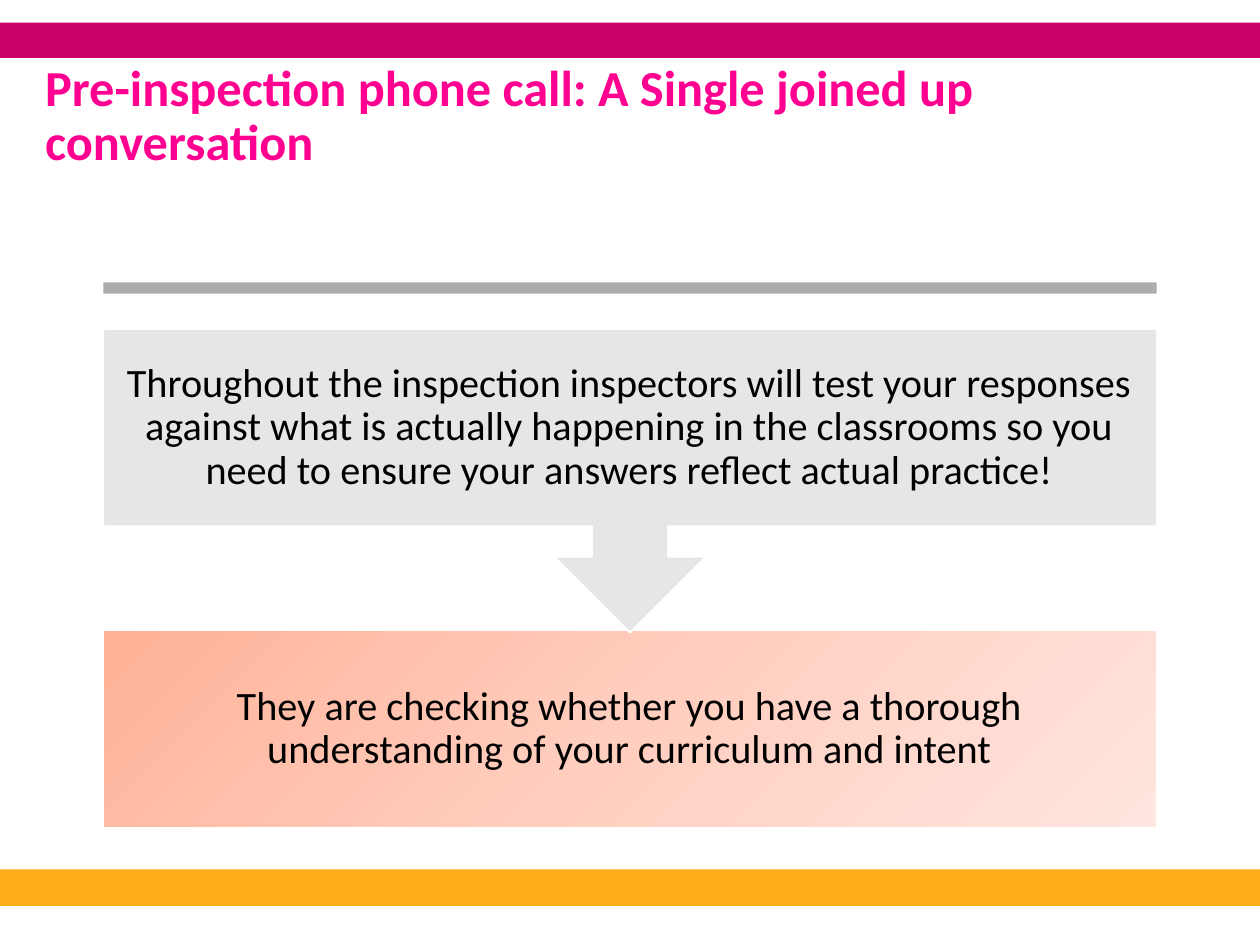
from copy import deepcopy

from lxml import etree
from pptx import Presentation
from pptx.dml.color import RGBColor
from pptx.enum import shapes, text
from pptx.oxml.ns import qn
from pptx.util import Inches, Pt

MAGENTA = RGBColor(0xCC, 0x00, 0x6A)
AMBER = RGBColor(0xFF, 0xAD, 0x19)
PINK = RGBColor(0xFF, 0x00, 0x90)
GREY = RGBColor(0x80, 0x80, 0x80)
LIGHT_GREY = RGBColor(0xE7, 0xE6, 0xE6)
WHITE = RGBColor(0xFF, 0xFF, 0xFF)
BLACK = RGBColor(0x00, 0x00, 0x00)
PEACH = [
    (0, RGBColor(0xFF, 0xB2, 0x97)),
    (0.5, RGBColor(0xFF, 0xCE, 0xBF)),
    (1, RGBColor(0xFF, 0xE6, 0xE0)),
]

TITLE = "Pre-inspection phone call: A Single joined up conversation"
CHECKED = (
    "Throughout the inspection inspectors will test your responses against what is "
    "actually happening in the classrooms so you need to ensure your answers reflect "
    "actual practice!"
)
PURPOSE = (
    "They are checking whether you have a thorough understanding of your curriculum "
    "and intent"
)

SLIDE_WIDTH, SLIDE_HEIGHT = 10, 7.5
STEP_LEFT, STEP_WIDTH, STEP_HEIGHT = 0.82, 8.36, 1.57
CHECKED_TOP, PURPOSE_TOP = 2.61, 5
CALLOUT_HEIGHT = 2.41

prs = Presentation()
prs.slide_width, prs.slide_height = Inches(SLIDE_WIDTH), Inches(SLIDE_HEIGHT)
slide = prs.slides.add_slide(prs.slide_layouts[6])


def add_block(kind, box, colour=None, outlined=False):
    block = slide.shapes.add_shape(kind, *map(Inches, box))
    block.shadow.inherit = False
    if colour is not None:
        block.fill.solid()
        block.fill.fore_color.rgb = colour
    if outlined:
        block.line.color.rgb = WHITE
        block.line.width = Pt(1)
    else:
        block.line.fill.background()
    return block


def add_words(words, box, size, colour, bold=False, align=text.PP_ALIGN.LEFT, inset=None):
    frame = slide.shapes.add_textbox(*map(Inches, box)).text_frame
    frame.word_wrap = True
    frame.vertical_anchor = text.MSO_ANCHOR.MIDDLE
    if inset is not None:
        frame.margin_left = frame.margin_right = Inches(inset)
        frame.margin_top = frame.margin_bottom = Inches(inset)
    frame.text = words
    paragraph = frame.paragraphs[0]
    paragraph.alignment = align
    paragraph.line_spacing = 0.9
    font = paragraph.runs[0].font
    font.name, font.size, font.bold = "Calibri", Pt(size), bold
    font.color.rgb = colour


def fill_gradient(block, stops):
    block.fill.gradient()
    block.fill.gradient_angle = 315
    stop_list = block._element.spPr.find(qn("a:gradFill")).find(qn("a:gsLst"))
    while len(stop_list) < len(stops):
        stop_list.append(deepcopy(stop_list[0]))
    for stop, (position, colour) in zip(block.fill.gradient_stops, stops):
        stop.position = position
        stop.color.rgb = colour


RECTANGLE = shapes.MSO_SHAPE.RECTANGLE
add_block(RECTANGLE, (0, 6.9, SLIDE_WIDTH, 0.29), AMBER)
add_block(RECTANGLE, (0, 0.18, SLIDE_WIDTH, 0.28), MAGENTA)
add_words(TITLE, (0.26, 0.53, 9.53, 0.8), 28.8, PINK, bold=True)

divider = add_block(RECTANGLE, (STEP_LEFT, 2.24, STEP_WIDTH, 0.09), GREY)
divider_colour = next(divider._element.spPr.iter(qn("a:srgbClr")))
etree.SubElement(divider_colour, qn("a:alpha"), val="65000")

purpose_block = add_block(
    RECTANGLE, (STEP_LEFT, PURPOSE_TOP, STEP_WIDTH, STEP_HEIGHT), outlined=True
)
fill_gradient(purpose_block, PEACH)
callout = add_block(
    shapes.MSO_SHAPE.UP_ARROW_CALLOUT,
    (STEP_LEFT, CHECKED_TOP, STEP_WIDTH, CALLOUT_HEIGHT),
    LIGHT_GREY,
    outlined=True,
)
callout.rotation = 180

for words, top in ((PURPOSE, PURPOSE_TOP), (CHECKED, CHECKED_TOP)):
    add_words(
        words,
        (STEP_LEFT, top, STEP_WIDTH, STEP_HEIGHT),
        23,
        BLACK,
        align=text.PP_ALIGN.CENTER,
        inset=0.18,
    )

prs.save("out.pptx")
